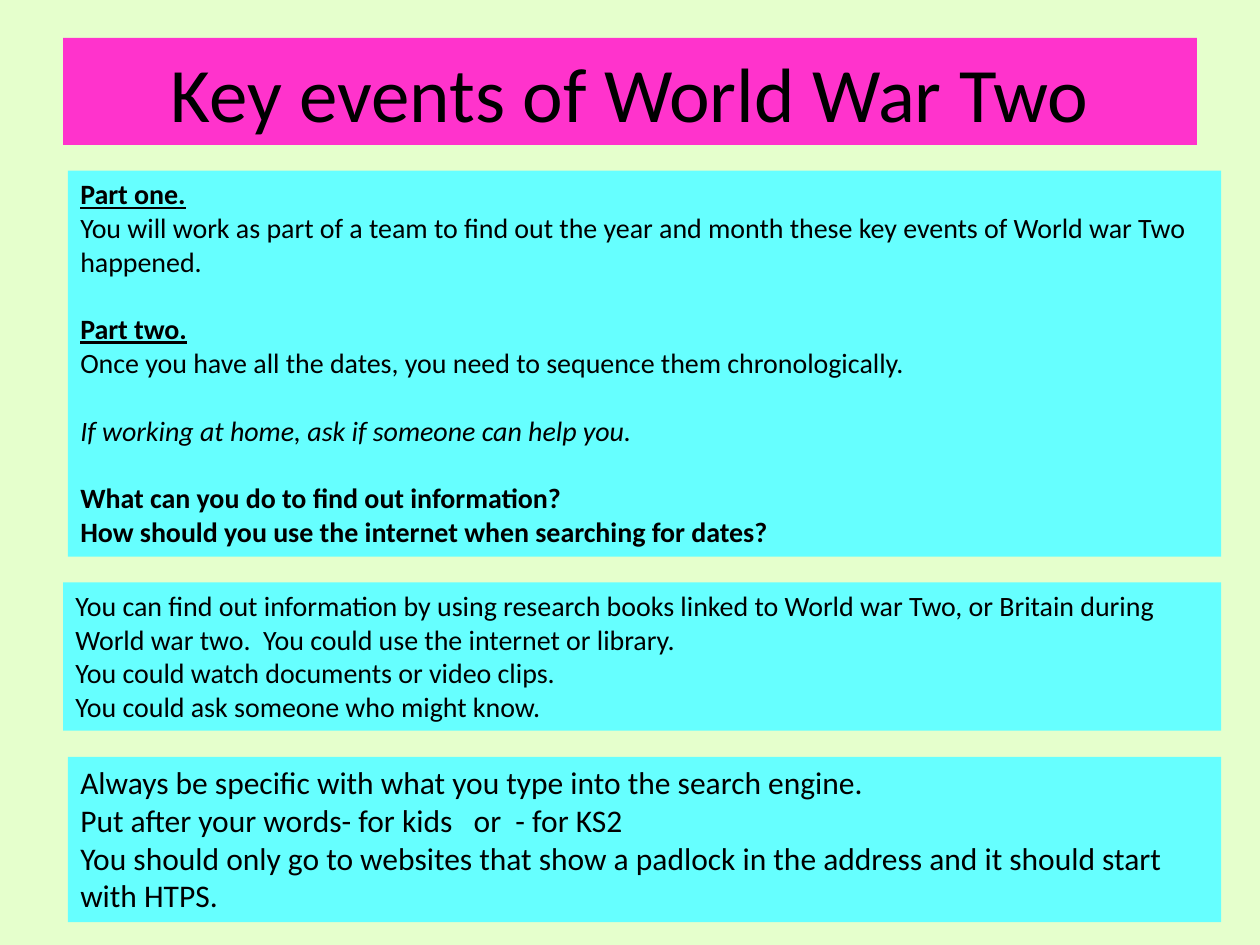
from pptx import Presentation
from pptx.dml.color import RGBColor
from pptx.enum.text import MSO_ANCHOR, MSO_AUTO_SIZE, PP_ALIGN
from pptx.util import Pt

FONT = "Calibri"
BLACK = "000000"
PINK = "FF33CC"
CYAN = "66FFFF"
PALE_GREEN = "E5FFCC"
SECTION_GAP = 19.5

TASK_LINES = [
    ("Part one.", "heading", 0),
    ("You will work as part of a team to find out the year and month these key events of World war Two happened.", "plain", 0),
    ("Part two.", "heading", SECTION_GAP),
    ("Once you have all the dates, you need to sequence them chronologically.", "plain", 0),
    ("If working at home, ask if someone can help you.", "italic", SECTION_GAP),
    ("What can you do to find out information?", "bold", SECTION_GAP),
    ("How should you use the internet when searching for dates?", "bold", 0),
]
RESEARCH_LINES = [
    ("You can find out information by using research books linked to World war Two, or Britain during World war two.  You could use the internet or library.", "plain", 0),
    ("You could watch documents or video clips.", "plain", 0),
    ("You could ask someone who might know.", "plain", 0),
]
SEARCH_LINES = [
    ("Always be specific with what you type into the search engine.", "plain", 0),
    ("Put after your words- for kids   or  - for KS2", "plain", 0),
    ("You should only go to websites that show a padlock in the address and it should start with HTPS.", "plain", 0),
]


def paint(fill, colour):
    fill.solid()
    fill.fore_color.rgb = RGBColor.from_string(colour)


def style_font(font, size):
    font.name = FONT
    font.size = Pt(size)
    font.color.rgb = RGBColor.from_string(BLACK)


def add_title(page, text):
    title = page.shapes.title
    title.left, title.top, title.width, title.height = Pt(36), Pt(21.6), Pt(648), Pt(61.2)
    paint(title.fill, PINK)
    frame = title.text_frame
    frame.text = text
    frame.vertical_anchor = MSO_ANCHOR.MIDDLE
    para = frame.paragraphs[0]
    para.alignment = PP_ALIGN.CENTER
    style_font(para.runs[0].font, 44)


def add_panel(page, left, top, width, height, lines, size):
    box = page.shapes.add_textbox(Pt(left), Pt(top), Pt(width), Pt(height))
    paint(box.fill, CYAN)
    frame = box.text_frame
    frame.word_wrap = True
    frame.auto_size = MSO_AUTO_SIZE.SHAPE_TO_FIT_TEXT
    frame.text = "\n".join(text for text, style, gap in lines)
    for para, (text, style, gap) in zip(frame.paragraphs, lines):
        para.space_before = Pt(gap)
        font = para.runs[0].font
        style_font(font, size)
        font.bold = style in ("heading", "bold")
        font.underline = style == "heading"
        font.italic = style == "italic"


def main():
    deck = Presentation()
    deck.slide_width, deck.slide_height = Pt(720), Pt(540)
    page = deck.slides.add_slide(deck.slide_layouts[5])
    paint(page.background.fill, PALE_GREEN)
    add_title(page, "Key events of World War Two")
    add_panel(page, 38.8, 97.6, 659, 220.6, TASK_LINES, 16)
    add_panel(page, 36, 332.8, 661.8, 84.8, RESEARCH_LINES, 16)
    add_panel(page, 38.8, 432.5, 659, 94.5, SEARCH_LINES, 18)
    deck.save("out.pptx")


if __name__ == "__main__":
    main()
